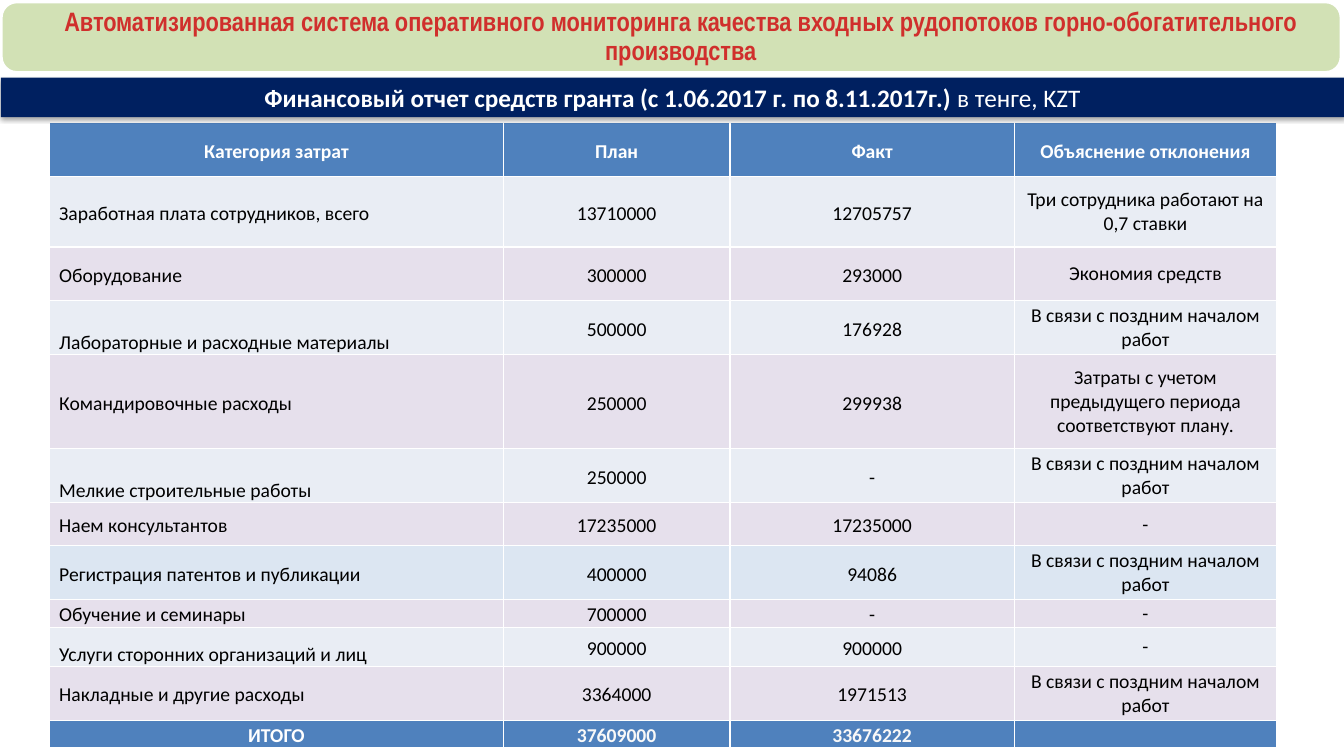
from dataclasses import dataclass

from lxml import etree
from pptx import Presentation
from pptx.dml.color import RGBColor
from pptx.enum.shapes import MSO_SHAPE
from pptx.enum.text import MSO_ANCHOR, PP_ALIGN
from pptx.oxml.ns import qn
from pptx.util import Pt

ROUNDED = MSO_SHAPE.ROUNDED_RECTANGLE
MIDDLE, BOTTOM = MSO_ANCHOR.MIDDLE, MSO_ANCHOR.BOTTOM
LEFT, CENTER = PP_ALIGN.LEFT, PP_ALIGN.CENTER


@dataclass(frozen=True)
class Theme:
    white: str = "FFFFFF"
    black: str = "000000"
    title_fill: str = "D2E1B5"
    title_text: str = "D02F2C"
    bar_fill: str = "002060"
    accent: str = "4F81BD"
    total_text: str = "F8F8F8"
    gray: str = "E9EDF4"
    lilac: str = "E6E0EC"
    blue: str = "DCE6F2"
    title_font: str = "Arial Narrow"
    body_font: str = "Calibri"
    title_size: int = 19
    bar_size: int = 18
    table_size: int = 14


THEME = Theme()

TITLE = ("Автоматизированная система оперативного мониторинга качества "
         "входных рудопотоков горно-обогатительного производства")
PERIOD = "Финансовый отчет средств гранта (с 1.06.2017 г. по 8.11.2017г.) "
CURRENCY = "в тенге, KZT"
LATE_START = "В связи с поздним началом работ"

COLUMN_WIDTHS = [324, 162, 203, 187.5]
HEADER = ["Категория затрат", "План", "Факт", "Объяснение отклонения"]
TOTAL = ["ИТОГО", "37609000", "33676222", ""]
EDGE_HEIGHTS = (38.6, 19.6)
EXPENSES = [
    (50.4, THEME.gray, MIDDLE, ["Заработная плата сотрудников, всего", "13710000",
                                "12705757", "Три сотрудника работают на 0,7 ставки"]),
    (38.4, THEME.lilac, MIDDLE, ["Оборудование", "300000", "293000", "Экономия средств"]),
    (38.6, THEME.gray, BOTTOM, ["Лабораторные и расходные материалы", "500000",
                                "176928", LATE_START]),
    (67.2, THEME.lilac, MIDDLE, ["Командировочные расходы", "250000", "299938",
                                 "Затраты с учетом предыдущего периода соответствуют плану."]),
    (38.6, THEME.gray, BOTTOM, ["Мелкие строительные работы", "250000", "-", LATE_START]),
    (30.6, THEME.lilac, MIDDLE, ["Наем консультантов", "17235000", "17235000", "-"]),
    (38.6, THEME.blue, MIDDLE, ["Регистрация патентов и публикации", "400000",
                                "94086", LATE_START]),
    (19.6, THEME.lilac, BOTTOM, ["Обучение и семинары", "700000", "-", "-"]),
    (28, THEME.gray, BOTTOM, ["Услуги сторонних организаций и лиц", "900000", "900000", "-"]),
    (38.6, THEME.lilac, MIDDLE, ["Накладные и другие расходы", "3364000",
                                 "1971513", LATE_START]),
]


def apply_format(target, values):
    for name, value in values.items():
        setattr(target, name, value)


def paint(fill, color):
    fill.solid()
    fill.fore_color.rgb = RGBColor.from_string(color)


def margins(left, top, right, bottom):
    return {"margin_left": Pt(left), "margin_top": Pt(top),
            "margin_right": Pt(right), "margin_bottom": Pt(bottom)}


def add_run(paragraph, text, color, **values):
    run = paragraph.add_run()
    run.text = text
    apply_format(run.font, values)
    run.font.color.rgb = RGBColor.from_string(color)


def add_panel(slide, box, corner, color, insets):
    panel = slide.shapes.add_shape(ROUNDED, *(Pt(value) for value in box))
    panel.adjustments[0] = corner
    panel.shadow.inherit = False
    paint(panel.fill, color)
    panel.line.fill.background()
    apply_format(panel.text_frame, {
        "word_wrap": True, "vertical_anchor": MIDDLE, **margins(*insets)})
    panel.text_frame.paragraphs[0].alignment = CENTER
    return panel


def add_shadow(shape, color, blur, distance, opacity):
    effects = shape._element.spPr.find(qn("a:effectLst"))
    shadow = etree.SubElement(effects, qn("a:outerShdw"), {
        "blurRad": str(Pt(blur)), "dist": str(Pt(distance)),
        "dir": str(90 * 60000), "rotWithShape": "0"})
    tint = etree.SubElement(shadow, qn("a:srgbClr"), val=color)
    etree.SubElement(tint, qn("a:alpha"), val=str(opacity * 1000))


def add_borders(cell, color, width):
    properties = cell._tc.get_or_add_tcPr()
    for index, side in enumerate(("lnL", "lnR", "lnT", "lnB")):
        border = etree.Element(qn(f"a:{side}"), w=str(Pt(width)))
        fill = etree.SubElement(border, qn("a:solidFill"))
        etree.SubElement(fill, qn("a:srgbClr"), val=color)
        properties.insert(index, border)


def fill_cell(cell, text, fill, color, bold, anchor, alignment, spacing, side):
    paint(cell.fill, fill)
    add_borders(cell, THEME.white, 1)
    apply_format(cell, {"vertical_anchor": anchor, **margins(side, 0, side, 0)})
    paragraph = cell.text_frame.paragraphs[0]
    apply_format(paragraph, {"alignment": alignment, "line_spacing": spacing})
    if text:
        add_run(paragraph, text, color, name=THEME.body_font,
                size=Pt(THEME.table_size), bold=bold)
    else:
        paragraph._p.get_or_add_endParaRPr().set("sz", str(THEME.table_size * 100))


def add_expense_table(slide):
    heights = [EDGE_HEIGHTS[0], *(row[0] for row in EXPENSES), EDGE_HEIGHTS[1]]
    table = slide.shapes.add_table(
        len(heights), len(COLUMN_WIDTHS), Pt(35.5), Pt(87.5),
        Pt(sum(COLUMN_WIDTHS)), Pt(sum(heights))).table
    table.horz_banding = False
    for column, width in zip(table.columns, COLUMN_WIDTHS):
        column.width = Pt(width)
    for row, height in zip(table.rows, heights):
        row.height = Pt(height)

    last = len(heights) - 1
    for index, text in enumerate(HEADER):
        fill_cell(table.cell(0, index), text, THEME.accent, THEME.white, True,
                  MIDDLE, CENTER, 1.15, 6.8)
    for index, text in enumerate(TOTAL):
        color = THEME.total_text if index else THEME.white
        fill_cell(table.cell(last, index), text, THEME.accent, color, True,
                  MIDDLE, CENTER, 1.15, 5)
    for row, (_, fill, anchor, texts) in enumerate(EXPENSES, start=1):
        for index, text in enumerate(texts):
            label = index == 0
            fill_cell(table.cell(row, index), text, fill, THEME.black, False,
                      anchor if label else MIDDLE, LEFT if label else CENTER,
                      1.0 if index == 3 else 1.15, 6.8 if label or row == 1 else 5)


def add_period_bar(slide):
    bar = add_panel(slide, (0.7, 55.4, 959.3, 28.2), 0, THEME.bar_fill, (7.2, 3.6, 7.2, 3.6))
    add_shadow(bar, THEME.black, 3.1, 1.8, 35)
    paragraph = bar.text_frame.paragraphs[0]
    for text, bold in ((PERIOD, True), (CURRENCY, False)):
        add_run(paragraph, text, THEME.white, name=THEME.body_font,
                size=Pt(THEME.bar_size), bold=bold)


def add_title(slide):
    title = add_panel(slide, (0.9, 1.4, 957, 50.4), 0.22, THEME.title_fill, (21.6, 7.9, 7.9, 7.9))
    paint(title.line.fill, THEME.white)
    title.line.width = Pt(2)
    paragraph = title.text_frame.paragraphs[0]
    paragraph.line_spacing = 0.9
    add_run(paragraph, TITLE, THEME.title_text, name=THEME.title_font,
            size=Pt(THEME.title_size), bold=True)


def main():
    presentation = Presentation()
    presentation.slide_width, presentation.slide_height = Pt(960), Pt(540)
    slide = presentation.slides.add_slide(presentation.slide_layouts[6])
    add_expense_table(slide)
    add_period_bar(slide)
    add_title(slide)
    presentation.save("out.pptx")


if __name__ == "__main__":
    main()
